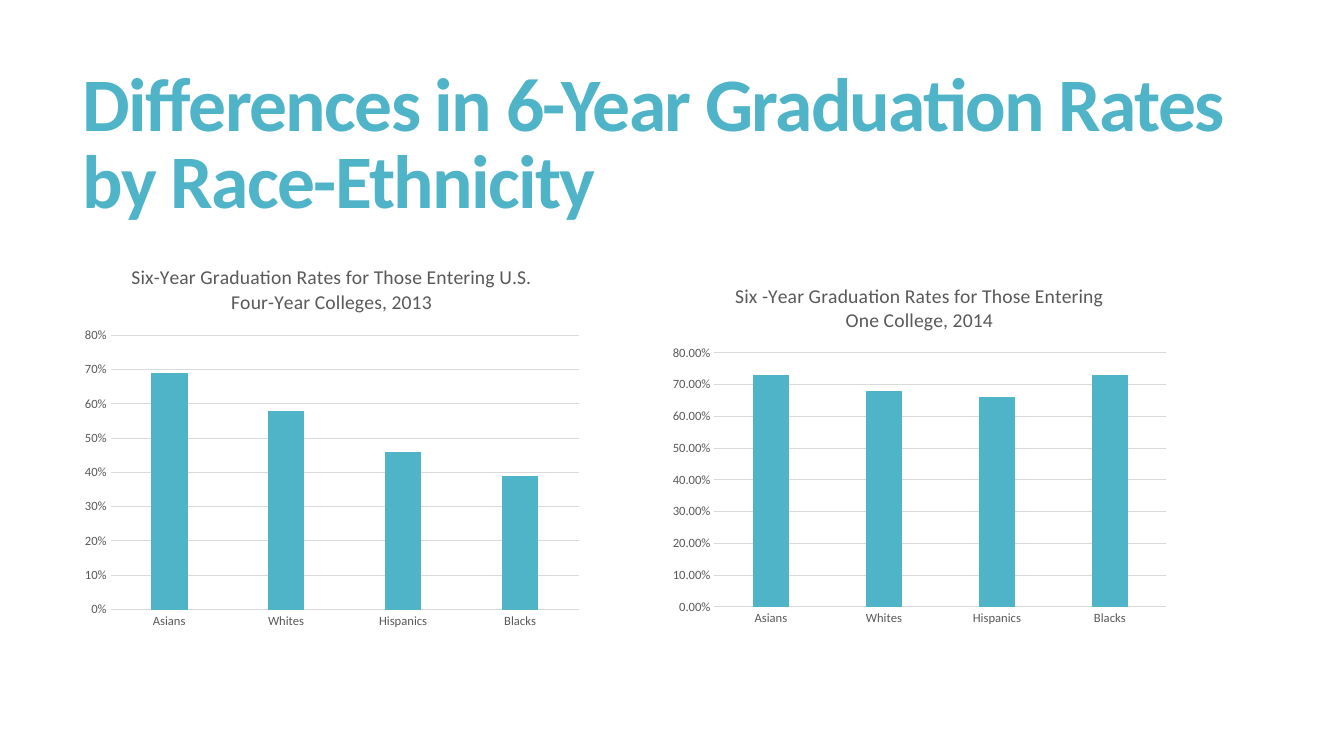
from pptx import Presentation
from pptx.chart.data import CategoryChartData
from pptx.dml.color import RGBColor
from pptx.enum.chart import XL_CHART_TYPE, XL_TICK_MARK
from pptx.enum.text import MSO_ANCHOR, MSO_AUTO_SIZE, PP_ALIGN
from pptx.util import Inches, Pt

TEAL = RGBColor(0x50, 0xB4, 0xC8)
GRAY = RGBColor(0x59, 0x59, 0x59)
RULE = RGBColor(0xD9, 0xD9, 0xD9)
BLACK = RGBColor(0, 0, 0)
FONT = "Calibri"
GROUPS = ["Asians", "Whites", "Hispanics", "Blacks"]


def style_font(font, size, color, bold=False):
    font.name = FONT
    font.size = Pt(size)
    font.bold = bold
    font.color.rgb = color


def write_text(frame, text, size, color, bold=False, align=None, line_spacing=None, tracking=None):
    frame.text = text
    for para in frame.paragraphs:
        para.alignment = align
        para.line_spacing = line_spacing
        for span in para.runs:
            style_font(span.font, size, color, bold)
            if tracking is not None:
                span.font._element.set("spc", str(round(tracking * 100)))


def place_title(page, box, text):
    title = page.shapes.title
    title.left, title.top, title.width, title.height = map(Inches, box)
    frame = title.text_frame
    frame.word_wrap = True
    frame.auto_size = MSO_AUTO_SIZE.NONE
    frame.vertical_anchor = MSO_ANCHOR.MIDDLE
    write_text(frame, text, 54, TEAL, bold=True, align=PP_ALIGN.LEFT, line_spacing=0.85, tracking=-1.2)


def style_axis(axis):
    axis.major_tick_mark = XL_TICK_MARK.NONE
    axis.minor_tick_mark = XL_TICK_MARK.NONE
    style_font(axis.tick_labels.font, 9, GRAY)


def style_rule(line):
    line.color.rgb = RULE
    line.width = Pt(0.75)


def add_rate_chart(page, box, heading, rates, number_format):
    rate_data = CategoryChartData(number_format=number_format)
    rate_data.categories = GROUPS
    rate_data.add_series("Series 1", rates)
    chart = page.shapes.add_chart(XL_CHART_TYPE.COLUMN_CLUSTERED, *map(Inches, box), rate_data).chart
    style_font(chart.font, 10, BLACK)
    chart.has_legend = False
    chart.has_title = True
    write_text(chart.chart_title.text_frame, heading, 14, GRAY)
    chart.chart_title.include_in_layout = False

    plot = chart.plots[0]
    plot.gap_width = 219
    plot.overlap = -27
    plot.vary_by_categories = False
    fill = plot.series[0].format.fill
    fill.solid()
    fill.fore_color.rgb = TEAL

    group_axis, rate_axis = chart.category_axis, chart.value_axis
    style_axis(group_axis)
    style_rule(group_axis.format.line)
    style_axis(rate_axis)
    rate_axis.minimum_scale = 0
    rate_axis.format.line.fill.background()
    rate_axis.has_major_gridlines = True
    style_rule(rate_axis.major_gridlines.format.line)
    rate_axis.tick_labels.number_format = number_format
    rate_axis.tick_labels.number_format_is_linked = False


def build_rates_page(deck):
    page = deck.slides.add_slide(deck.slide_layouts[5])
    place_title(page, (0.72, 0.55, 11.78, 1.81), "Differences in 6-Year Graduation Rates by Race-Ethnicity")
    add_rate_chart(page, (0.74, 2.45, 5.1, 3.86),
                   "Six-Year Graduation Rates for Those Entering U.S. Four-Year Colleges, 2013",
                   (0.69, 0.58, 0.46, 0.39), "0%")
    add_rate_chart(page, (6.57, 2.65, 5.1, 3.63),
                   "Six -Year Graduation Rates for Those Entering\nOne College, 2014",
                   (0.73, 0.68, 0.66, 0.73), "0.00%")


def main():
    deck = Presentation()
    deck.slide_width = Inches(13.33)
    deck.slide_height = Inches(7.5)
    build_rates_page(deck)
    deck.save("out.pptx")


if __name__ == "__main__":
    main()
